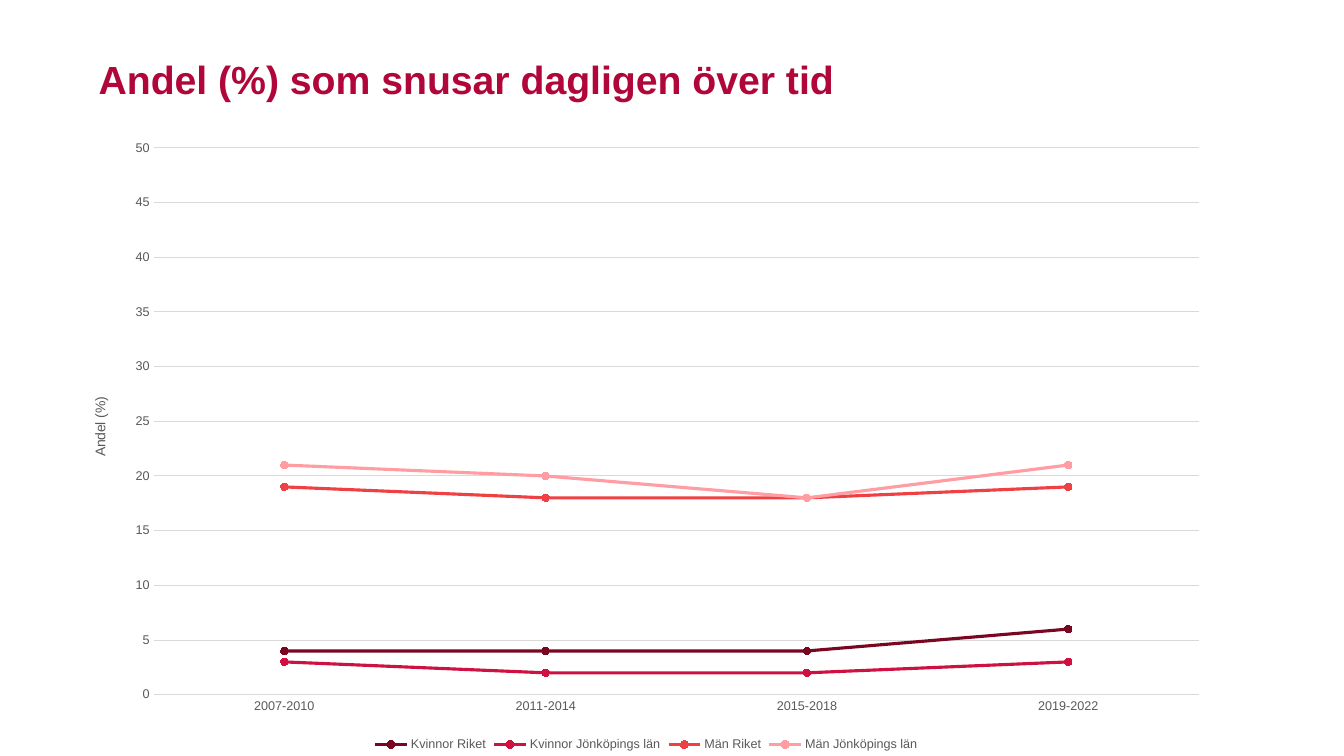
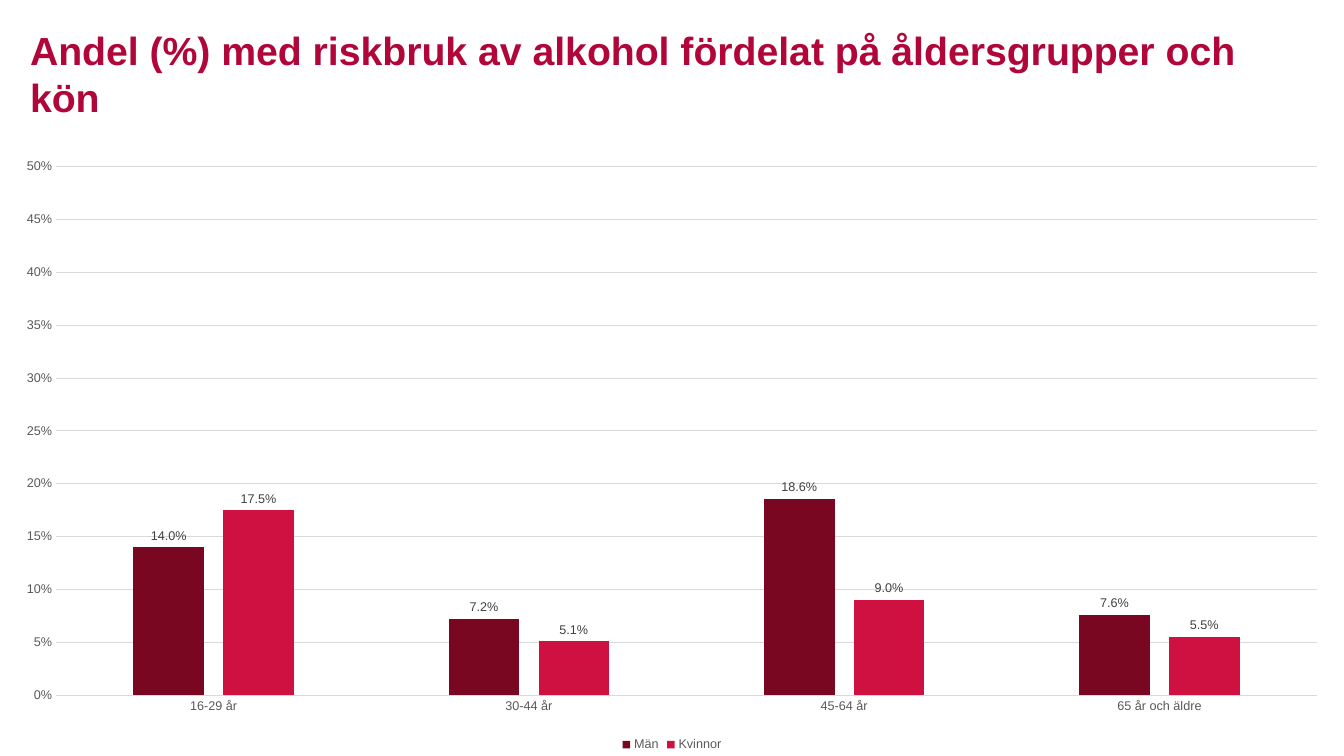
from pptx import Presentation
from pptx.chart.data import CategoryChartData
from pptx.dml.color import RGBColor
from pptx.enum import chart as ch, text
from pptx.util import Inches, Pt

# Shared style
FONT = "Arial"
TITLE_RED = RGBColor(0xB1, 0x06, 0x3A)
WINE = RGBColor(0x79, 0x07, 0x21)
CRIMSON = RGBColor(0xCE, 0x11, 0x41)
CORAL = RGBColor(0xEF, 0x40, 0x44)
PINK = RGBColor(0xFF, 0x9D, 0xA2)
AXIS_GREY = RGBColor(0x59, 0x59, 0x59)
LABEL_GREY = RGBColor(0x40, 0x40, 0x40)
GRID_GREY = RGBColor(0xD9, 0xD9, 0xD9)


def style_font(font, size, color, bold=False):
    font.name, font.size, font.bold = FONT, Pt(size), bold
    font.color.rgb = color


def style_line(line, color, width):
    line.color.rgb = color
    line.width = Pt(width)


def add_title(slide, wording, left, top, width, height, wrap=True, space_after=0):
    frame = slide.shapes.add_textbox(*map(Inches, (left, top, width, height))).text_frame
    frame.word_wrap = wrap
    frame.auto_size = text.MSO_AUTO_SIZE.SHAPE_TO_FIT_TEXT
    frame.text = wording
    heading = frame.paragraphs[0]
    heading.space_after = Pt(space_after)
    style_font(heading.runs[0].font, 28, TITLE_RED, bold=True)


def add_chart(slide, kind, place, categories, series, top_value, step, number_format):
    """Add a chart with the shared axes, grid and legend; series are (name, values)."""
    data = CategoryChartData()
    data.categories = categories
    for name, values in series:
        data.add_series(name, values)
    chart = slide.shapes.add_chart(kind, *map(Inches, place), data).chart
    chart.has_title = False
    chart.font.name, chart.font.size = FONT, Pt(10)
    chart.plots[0].vary_by_categories = False

    # Axes
    for axis in (chart.category_axis, chart.value_axis):
        axis.major_tick_mark = axis.minor_tick_mark = ch.XL_TICK_MARK.NONE
        style_font(axis.tick_labels.font, 9, AXIS_GREY)
    style_line(chart.category_axis.format.line, GRID_GREY, 0.75)
    scale = chart.value_axis
    scale.minimum_scale, scale.maximum_scale, scale.major_unit = 0, top_value, step
    scale.tick_labels.number_format = number_format
    scale.tick_labels.number_format_is_linked = False
    scale.format.line.fill.background()
    style_line(scale.major_gridlines.format.line, GRID_GREY, 0.75)

    # Legend
    chart.has_legend = True
    chart.legend.position = ch.XL_LEGEND_POSITION.BOTTOM
    chart.legend.include_in_layout = False
    style_font(chart.legend.font, 9, AXIS_GREY)
    return chart


def build_snus_slide(slide):
    chart = add_chart(
        slide, ch.XL_CHART_TYPE.LINE_MARKERS, (0.7, 1.27, 11.42, 6.23),
        ["2007-2010", "2011-2014", "2015-2018", "2019-2022"],
        [("Kvinnor Riket", (4, 4, 4, 6)),
         ("Kvinnor Jönköpings län", (3, 2, 2, 3)),
         ("Män Riket", (19, 18, 18, 19)),
         ("Män Jönköpings län", (21, 20, 18, 21))],
        50, 5, "0")
    for group, color in zip(chart.plots[0].series, (WINE, CRIMSON, CORAL, PINK)):
        group.smooth = False
        style_line(group.format.line, color, 2.25)
        group.marker.style, group.marker.size = ch.XL_MARKER_STYLE.CIRCLE, 5
        group.marker.format.fill.solid()
        group.marker.format.fill.fore_color.rgb = color
        style_line(group.marker.format.line, color, 0.75)

    # Upright axis title
    caption = chart.value_axis.axis_title.text_frame
    caption.text = "Andel (%)"
    caption._txBody.bodyPr.set("rot", "-5400000")
    style_font(caption.paragraphs[0].runs[0].font, 10, AXIS_GREY)

    add_title(slide, "Andel (%) som snusar dagligen över tid",
              0.88, 0.5, 7.58, 0.57, wrap=False, space_after=18)


def build_alcohol_slide(slide):
    chart = add_chart(
        slide, ch.XL_CHART_TYPE.COLUMN_CLUSTERED, (0, 1.46, 13.33, 6.04),
        ["16-29 år", "30-44 år", "45-64 år", "65 år och äldre"],
        [("Män", (0.14, 0.072, 0.186, 0.076)),
         ("Kvinnor", (0.175, 0.051, 0.09, 0.055))],
        0.5, 0.05, "0%")
    columns = chart.plots[0]
    columns.gap_width, columns.overlap = 219, -27
    for group, color in zip(columns.series, (WINE, CRIMSON)):
        group.format.fill.solid()
        group.format.fill.fore_color.rgb = color
        labels = group.data_labels
        labels.show_value = True
        labels.position = ch.XL_LABEL_POSITION.OUTSIDE_END
        labels.number_format, labels.number_format_is_linked = "0.0%", False
        style_font(labels.font, 9, LABEL_GREY)

    add_title(slide, "Andel (%) med riskbruk av alkohol fördelat på åldersgrupper och kön",
              0.2, 0.21, 12.64, 1.04)


def main():
    deck = Presentation()
    deck.slide_width, deck.slide_height = Inches(13.33), Inches(7.5)
    for build in (build_snus_slide, build_alcohol_slide):
        build(deck.slides.add_slide(deck.slide_layouts[6]))
    deck.save("out.pptx")


if __name__ == "__main__":
    main()
